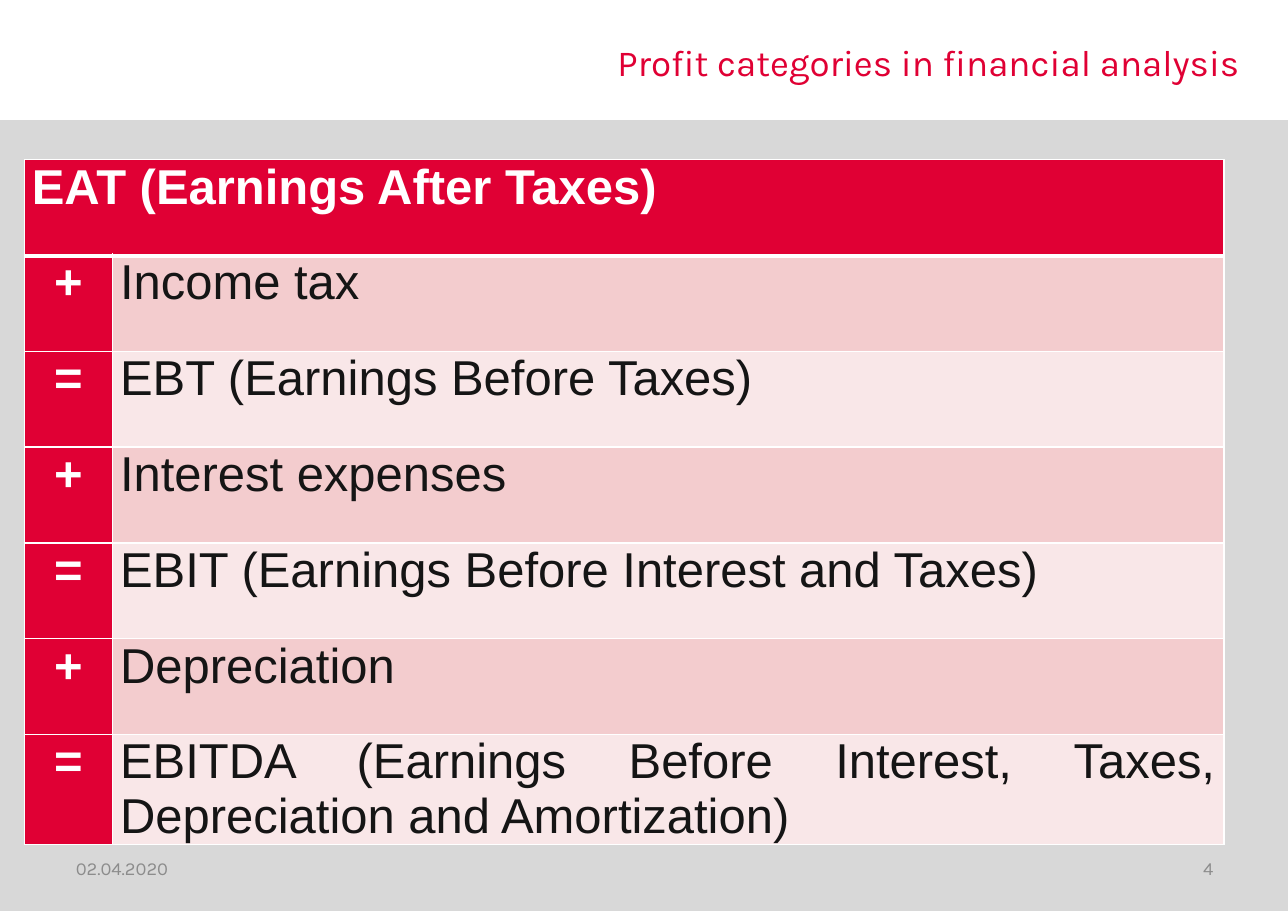
from lxml import etree
from pptx import Presentation
from pptx.dml.color import RGBColor
from pptx.enum import shapes, text
from pptx.oxml import ns
from pptx.util import Pt

RED = RGBColor(0xE0, 0x00, 0x34)
WHITE = RGBColor(0xFF, 0xFF, 0xFF)
INK = RGBColor(0x15, 0x15, 0x15)
GREY = RGBColor(0x8C, 0x8C, 0x8C)
PANEL = RGBColor(0xD8, 0xD8, 0xD8)
PINK = RGBColor(0xF3, 0xCC, 0xCE)
PALE = RGBColor(0xF9, 0xE7, 0xE8)

HEADER = "EAT (Earnings After Taxes)"
STEPS = [
    ("+", "Income tax"),
    ("=", "EBT (Earnings Before Taxes)"),
    ("+", "Interest expenses"),
    ("=", "EBIT (Earnings Before Interest and Taxes)"),
    ("+", "Depreciation"),
    ("=", "EBITDA (Earnings Before Interest, Taxes, Depreciation and Amortization)"),
]
ROW_HEIGHT = 62.64
COL_WIDTHS = (57.6, 726.48)
LEFT, CENTER, RIGHT, JUSTIFY = (
    text.PP_ALIGN.LEFT, text.PP_ALIGN.CENTER,
    text.PP_ALIGN.RIGHT, text.PP_ALIGN.JUSTIFY)


def write(tf, words, font, size, color, align, bold=False):
    p = tf.paragraphs[0]
    p.alignment = align
    r = p.add_run()
    r.text = words
    r.font.name = font
    r.font.size = Pt(size)
    r.font.bold = bold
    r.font.color.rgb = color


def add_panel(s):
    sp = s.shapes.add_shape(
        shapes.MSO_SHAPE.RECTANGLE, Pt(0), Pt(78.5), Pt(841.68), Pt(516.94))
    sp.shadow.inherit = False
    sp.fill.solid()
    sp.fill.fore_color.rgb = PANEL
    sp.line.fill.background()


def set_title(s, words):
    sp = s.shapes.title
    sp.left, sp.top, sp.width, sp.height = Pt(203.8), Pt(14.4), Pt(613.4), Pt(51.8)
    tf = sp.text_frame
    tf.word_wrap = True
    tf.auto_size = text.MSO_AUTO_SIZE.NONE
    tf.vertical_anchor = text.MSO_ANCHOR.MIDDLE
    write(tf, words, "Karla", 24, RED, RIGHT)


def add_footer(s, words, left, align):
    sp = s.shapes.add_textbox(Pt(left), Pt(551.5), Pt(196.6), Pt(31.7))
    tf = sp.text_frame
    tf.word_wrap = True
    tf.vertical_anchor = text.MSO_ANCHOR.MIDDLE
    write(tf, words, "Karla", 12, GREY, align)


def set_borders(cell, top=1, bottom=1):
    tcPr = cell._tc.get_or_add_tcPr()
    for side, width in (("L", 1), ("R", 1), ("T", top), ("B", bottom)):
        ln = etree.SubElement(tcPr, ns.qn(f"a:ln{side}"), w=str(Pt(width)))
        fill = etree.SubElement(ln, ns.qn("a:solidFill"))
        etree.SubElement(fill, ns.qn("a:srgbClr"), val=str(WHITE))


def fill_cell(cell, words, fill, color, align, bold, top=1, bottom=1):
    set_borders(cell, top, bottom)
    cell.fill.solid()
    cell.fill.fore_color.rgb = fill
    cell.margin_left = cell.margin_right = Pt(5)
    cell.margin_top = cell.margin_bottom = Pt(0)
    write(cell.text_frame, words, "Arial", 32, color, align, bold)


def add_profit_table(s):
    rows = len(STEPS) + 1
    table = s.shapes.add_table(
        rows, 2, Pt(15.84), Pt(104.4),
        Pt(sum(COL_WIDTHS)), Pt(rows * ROW_HEIGHT)).table
    table.first_row = table.horz_banding = False
    for col, width in zip(table.columns, COL_WIDTHS):
        col.width = Pt(width)
    for row in table.rows:
        row.height = Pt(ROW_HEIGHT)

    table.cell(0, 0).merge(table.cell(0, 1))
    set_borders(table.cell(0, 1), bottom=3)
    fill_cell(table.cell(0, 0), HEADER, RED, WHITE, JUSTIFY, True, bottom=3)
    for i, (sign, label) in enumerate(STEPS, 1):
        top = 3 if i == 1 else 1
        shade = PINK if sign == "+" else PALE
        fill_cell(table.cell(i, 0), sign, RED, WHITE, CENTER, True, top)
        fill_cell(table.cell(i, 1), label, shade, INK, JUSTIFY, False, top)


def main():
    prs = Presentation()
    prs.slide_width, prs.slide_height = Pt(841.68), Pt(595.44)
    s = prs.slides.add_slide(prs.slide_layouts[5])
    add_panel(s)
    set_title(s, "Profit categories in financial analysis")
    add_profit_table(s)
    add_footer(s, "02.04.2020", 42.5, LEFT)
    add_footer(s, "4", 603.4, RIGHT)
    prs.save("out.pptx")


if __name__ == "__main__":
    main()
